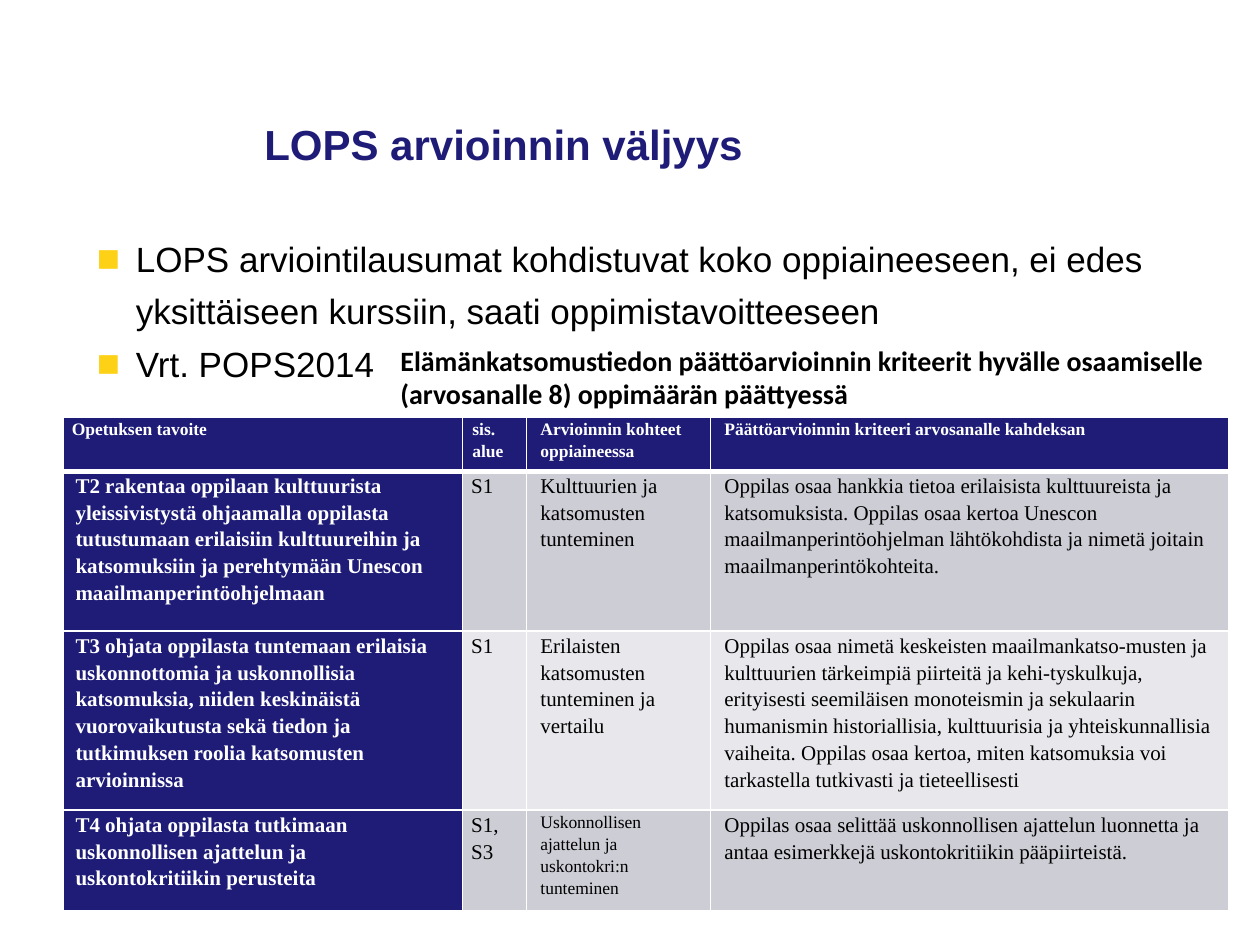
from lxml.etree import SubElement
from pptx import Presentation
from pptx.dml.color import RGBColor
from pptx.enum.text import MSO_ANCHOR
from pptx.oxml.ns import qn
from pptx.util import Inches, Pt

COLORS = {"navy": "1E1C77", "gold": "FCD116", "white": "FFFFFF",
          "black": "000000", "dark": "CDCDD6", "light": "E8E8EC"}
COLS = [3.17, 0.51, 1.46, 4.11]
ROWS = [0.43, 1.27, 1.42, 0.8]
INDENTS = [0.03, 0, 0.04, 0.04]
HEAD_INDENTS = [0, 0.01, 0.04, 0.04]
CELLS = [
    ["Opetuksen tavoite", "sis. alue", "Arvioinnin kohteet oppiaineessa",
     "Päättöarvioinnin kriteeri arvosanalle kahdeksan"],
    ["T2 rakentaa oppilaan kulttuurista yleissivistystä ohjaamalla oppilasta "
     "tutustumaan erilaisiin kulttuureihin ja katsomuksiin ja perehtymään "
     "Unescon maailmanperintöohjelmaan",
     "S1", "Kulttuurien ja katsomusten tunteminen",
     "Oppilas osaa hankkia tietoa erilaisista kulttuureista ja katsomuksista. "
     "Oppilas osaa kertoa Unescon maailmanperintöohjelman lähtökohdista ja "
     "nimetä joitain maailmanperintökohteita."],
    ["T3 ohjata oppilasta tuntemaan erilaisia uskonnottomia ja uskonnollisia "
     "katsomuksia, niiden keskinäistä vuorovaikutusta sekä tiedon ja "
     "tutkimuksen roolia katsomusten arvioinnissa",
     "S1", "Erilaisten katsomusten tunteminen ja vertailu",
     "Oppilas osaa nimetä keskeisten maailmankatso-musten ja kulttuurien "
     "tärkeimpiä piirteitä ja kehi-tyskulkuja, erityisesti seemiläisen "
     "monoteismin ja sekulaarin humanismin historiallisia, kulttuurisia ja "
     "yhteiskunnallisia vaiheita. Oppilas osaa kertoa, miten katsomuksia voi "
     "tarkastella tutkivasti ja tieteellisesti"],
    ["T4 ohjata oppilasta tutkimaan uskonnollisen ajattelun ja "
     "uskontokritiikin perusteita",
     "S1, S3", "Uskonnollisen ajattelun ja uskontokri:n tunteminen",
     "Oppilas osaa selittää uskonnollisen ajattelun luonnetta ja antaa "
     "esimerkkejä uskontokritiikin pääpiirteistä."],
]


def color(name):
    return RGBColor.from_string(COLORS[name])


def add_run(para, text, font, size, tone, bold=False):
    run = para.add_run()
    run.text = text
    run.font.name = font
    run.font.size = Pt(size)
    run.font.bold = bold
    run.font.color.rgb = color(tone)


def add_box(slide, left, top, width, height, anchor=MSO_ANCHOR.TOP):
    box = slide.shapes.add_textbox(
        Inches(left), Inches(top), Inches(width), Inches(height))
    frame = box.text_frame
    frame.word_wrap = True
    frame.vertical_anchor = anchor
    return frame


def set_indent(para, left, first=0):
    props = para._p.get_or_add_pPr()
    props.set("marL", str(Inches(left)))
    props.set("indent", str(Inches(first)))
    return props


def add_bullet(para):
    props = set_indent(para, 0.31, -0.31)
    tint = SubElement(props, qn("a:buClr"))
    SubElement(tint, qn("a:srgbClr"), val=COLORS["gold"])
    SubElement(props, qn("a:buSzPct"), val="110000")
    SubElement(props, qn("a:buFont"), typeface="Arial")
    SubElement(props, qn("a:buChar"), char="■")


def add_list(slide, items):
    frame = add_box(slide, 0.67, 1.75, 9, 1.49)
    for i, text in enumerate(items):
        para = frame.add_paragraph() if i else frame.paragraphs[0]
        add_bullet(para)
        para.line_spacing = Pt(30)
        add_run(para, text, "Arial", 20, "black")


def set_border(cell, row):
    """Draw white lines, thick under the header row."""
    props = cell._tc.get_or_add_tcPr()
    widths = {"L": 1, "R": 1, "T": 3 if row == 1 else 1,
              "B": 3 if row == 0 else 1}
    for side, width in widths.items():
        line = SubElement(props, qn(f"a:ln{side}"), w=str(Pt(width)))
        fill = SubElement(line, qn("a:solidFill"))
        SubElement(fill, qn("a:srgbClr"), val=COLORS["white"])


def fill_cell(cell, text, row, col):
    head = row == 0
    strong = head or col == 0
    set_border(cell, row)
    cell.fill.solid()
    shade = "dark" if row % 2 else "light"
    if row == len(ROWS) - 1:
        shade = "dark"
    cell.fill.fore_color.rgb = color("navy" if strong else shade)
    cell.margin_left = cell.margin_right = Inches(0.07)
    cell.margin_top = cell.margin_bottom = 0
    para = cell.text_frame.paragraphs[0]
    set_indent(para, (HEAD_INDENTS if head else INDENTS)[col])
    para.line_spacing = 1.15
    small = head or (row, col) == (3, 2)
    add_run(para, text, "Times New Roman", 10 if small else 12,
            "white" if strong else "black", strong)


def add_grid(slide):
    table = slide.shapes.add_table(
        len(ROWS), len(COLS), Inches(0.5), Inches(3.31),
        Inches(sum(COLS)), Inches(sum(ROWS))).table
    for col, width in zip(table.columns, COLS):
        col.width = Inches(width)
    for row, height in zip(table.rows, ROWS):
        row.height = Inches(height)
    for r, texts in enumerate(CELLS):
        for c, text in enumerate(texts):
            fill_cell(table.cell(r, c), text, r, c)


def main():
    deck = Presentation()
    deck.slide_width, deck.slide_height = Inches(10), Inches(7.5)
    slide = deck.slides.add_slide(deck.slide_layouts[6])

    title = add_box(slide, 2, 0.17, 7.67, 1.22, MSO_ANCHOR.BOTTOM)
    para = title.paragraphs[0]
    para.line_spacing = Pt(30)
    add_run(para, "LOPS arvioinnin väljyys", "Arial", 24, "navy", True)

    add_list(slide, [
        "LOPS arviointilausumat kohdistuvat koko oppiaineeseen, ei edes "
        "yksittäiseen kurssiin, saati oppimistavoitteeseen",
        "Vrt. POPS2014"])
    add_grid(slide)

    note = add_box(slide, 3.08, 2.67, 7.08, 0.64, MSO_ANCHOR.MIDDLE)
    add_run(note.paragraphs[0],
            "Elämänkatsomustiedon päättöarvioinnin kriteerit hyvälle "
            "osaamiselle (arvosanalle 8) oppimäärän päättyessä",
            "Calibri", 16, "black", True)
    deck.save("out.pptx")


if __name__ == "__main__":
    main()
